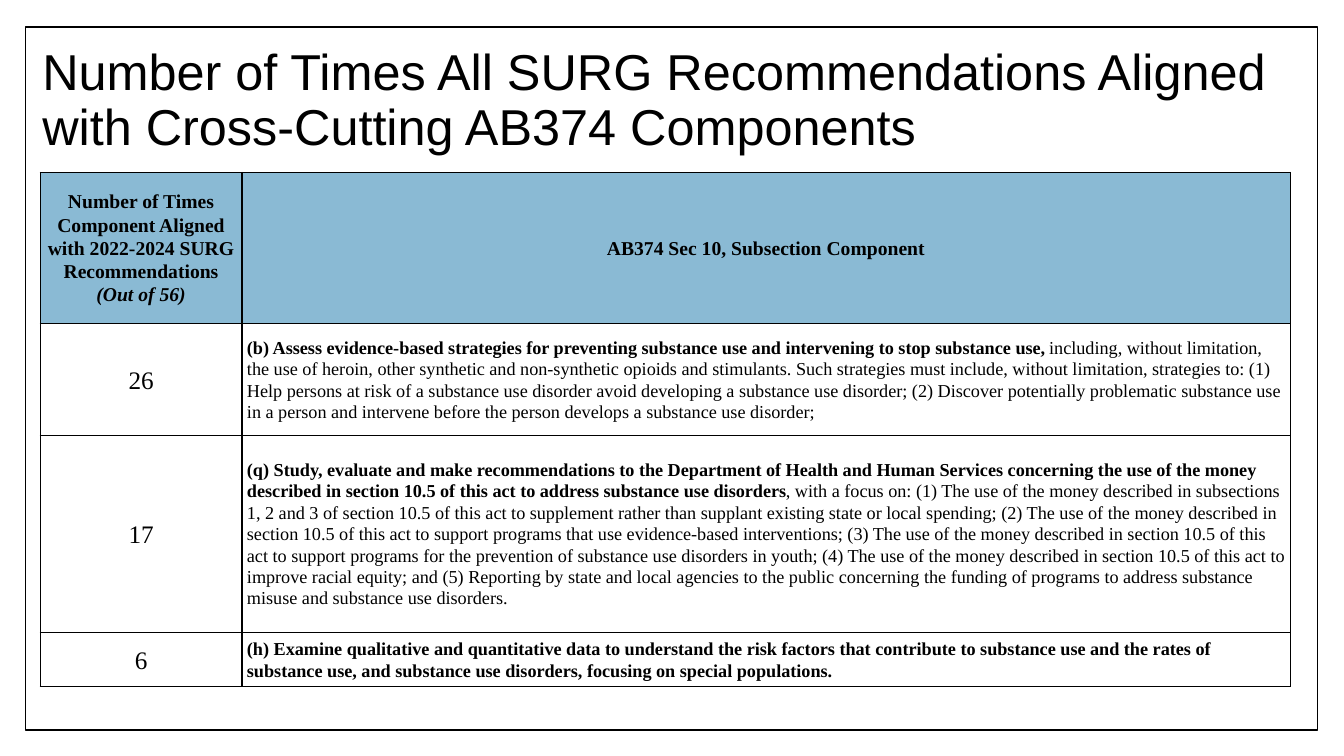
from dataclasses import dataclass

from lxml import etree
from pptx import Presentation
from pptx.dml.color import RGBColor
from pptx.enum.shapes import MSO_SHAPE
from pptx.enum.text import MSO_ANCHOR, MSO_AUTO_SIZE, PP_ALIGN
from pptx.oxml.ns import qn
from pptx.slide import Slide
from pptx.table import Table, _Cell
from pptx.text.text import _Paragraph
from pptx.util import Pt

BLACK = RGBColor(0x00, 0x00, 0x00)
WHITE = RGBColor(0xFF, 0xFF, 0xFF)
BLUE = RGBColor(0x8A, 0xBA, 0xD4)
RECT = MSO_SHAPE.RECTANGLE
MIDDLE = MSO_ANCHOR.MIDDLE
NO_FIT = MSO_AUTO_SIZE.NONE
LEFT = PP_ALIGN.LEFT
CENTER = PP_ALIGN.CENTER
SANS = "Arial"
SERIF = "Times New Roman"
TITLE = "Number of Times All SURG Recommendations Aligned with Cross-Cutting AB374 Components"
WIDTHS = (144, 748.8)
HEAD_HIGH = 108


@dataclass(frozen=True)
class Entry:
    count: str
    lead: str
    rest: str
    high: float


ENTRIES = (
    Entry(
        "26",
        "(b) Assess evidence-based strategies for preventing substance use and "
        "intervening to stop substance use, ",
        "including, without limitation, the use of heroin, other synthetic and "
        "non-synthetic opioids and stimulants. Such strategies must include, without "
        "limitation, strategies to: (1) Help persons at risk of a substance use disorder "
        "avoid developing a substance use disorder; (2) Discover potentially problematic "
        "substance use in a person and intervene before the person develops a substance "
        "use disorder;",
        80,
    ),
    Entry(
        "17",
        "(q) Study, evaluate and make recommendations to the Department of Health and "
        "Human Services concerning the use of the money described in section 10.5 of "
        "this act to address substance use disorders",
        ", with a focus on: (1) The use of the money described in subsections 1, 2 and 3 "
        "of section 10.5 of this act to supplement rather than supplant existing state "
        "or local spending; (2) The use of the money described in section 10.5 of this "
        "act to support programs that use evidence-based interventions; (3) The use of "
        "the money described in section 10.5 of this act to support programs for the "
        "prevention of substance use disorders in youth; (4) The use of the money "
        "described in section 10.5 of this act to improve racial equity; and (5) "
        "Reporting by state and local agencies to the public concerning the funding of "
        "programs to address substance misuse and substance use disorders.",
        140.5,
    ),
    Entry(
        "6",
        "(h) Examine qualitative and quantitative data to understand the risk factors "
        "that contribute to substance use and the rates of substance use, and substance "
        "use disorders, focusing on special populations.",
        "",
        39,
    ),
)


def write(para: _Paragraph, text: str, *, size: float, font: str = SERIF,
          bold: bool = False, slant: bool = False, align: PP_ALIGN = LEFT,
          pitch: float = 1.07) -> None:
    para.alignment = align
    para.line_spacing = pitch
    run = para.add_run()
    run.text = text
    run.font.name = font
    run.font.size = Pt(size)
    run.font.bold = bold
    run.font.italic = slant
    run.font.color.rgb = BLACK


def add_frame(slide: Slide) -> None:
    frame = slide.shapes.add_shape(RECT, Pt(18), Pt(19.4), Pt(923), Pt(502))
    frame.shadow.inherit = False
    frame.fill.solid()
    frame.fill.fore_color.rgb = WHITE
    frame.line.color.rgb = BLACK
    frame.line.width = Pt(1)
    slide.shapes.title.element.addprevious(frame.element)


def add_title(slide: Slide) -> None:
    title = slide.shapes.title
    title.left, title.top = Pt(23), Pt(19.4)
    title.width, title.height = Pt(904.3), Pt(106.6)
    body = title.text_frame
    body.word_wrap = True
    body.auto_size = NO_FIT
    body.vertical_anchor = MIDDLE
    write(body.paragraphs[0], TITLE, size=36, font=SANS, pitch=0.9)


def style_cell(cell: _Cell, head: bool) -> None:
    cell.vertical_anchor = MIDDLE
    cell.margin_left = cell.margin_right = Pt(3.6)
    cell.margin_top = cell.margin_bottom = 0
    props = cell._tc.get_or_add_tcPr()
    for side in ("lnL", "lnR", "lnT", "lnB"):
        line = etree.SubElement(props, qn(f"a:{side}"), w=str(Pt(1)))
        fill = etree.SubElement(line, qn("a:solidFill"))
        etree.SubElement(fill, qn("a:srgbClr"), val=str(BLACK))
    if head:
        cell.fill.solid()
        cell.fill.fore_color.rgb = BLUE
    else:
        cell.fill.background()


def make_table(slide: Slide) -> Table:
    highs = [HEAD_HIGH] + [entry.high for entry in ENTRIES]
    table = slide.shapes.add_table(
        len(highs), len(WIDTHS), Pt(28.8), Pt(123.1), Pt(sum(WIDTHS)), Pt(sum(highs))
    ).table
    table.horz_banding = False
    for col, wide in zip(table.columns, WIDTHS):
        col.width = Pt(wide)
    for index, (row, high) in enumerate(zip(table.rows, highs)):
        row.height = Pt(high)
        for cell in row.cells:
            style_cell(cell, index == 0)
    return table


def fill_table(table: Table) -> None:
    count, part = (cell.text_frame for cell in table.rows[0].cells)
    write(count.paragraphs[0],
          "Number of Times Component Aligned with 2022-2024 SURG Recommendations",
          size=14, bold=True, align=CENTER)
    write(count.add_paragraph(), "(Out of 56)",
          size=14, bold=True, slant=True, align=CENTER)
    write(part.paragraphs[0], "AB374 Sec 10, Subsection Component",
          size=14, bold=True, align=CENTER)
    for index, entry in enumerate(ENTRIES, 1):
        count, part = (cell.text_frame.paragraphs[0] for cell in table.rows[index].cells)
        write(count, entry.count, size=18, align=CENTER)
        write(part, entry.lead, size=13, bold=True)
        if entry.rest:
            write(part, entry.rest, size=13)


def main() -> None:
    deck = Presentation()
    deck.slide_width, deck.slide_height = Pt(960), Pt(540)
    slide = deck.slides.add_slide(deck.slide_layouts.get_by_name("Title Only"))
    add_frame(slide)
    add_title(slide)
    fill_table(make_table(slide))
    deck.save("out.pptx")


if __name__ == "__main__":
    main()
